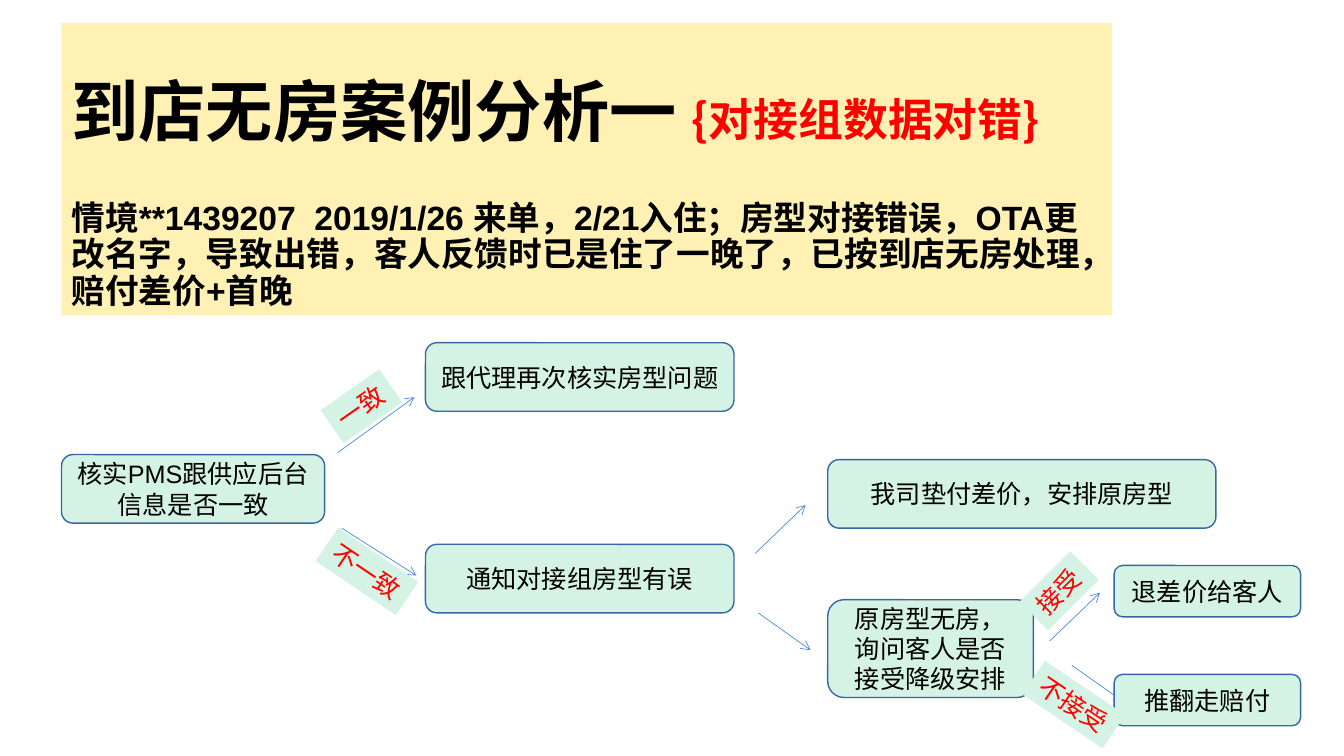
"""Build the slide on a hotel booking case and its decision tree."""
from lxml.etree import SubElement
from pptx import Presentation
from pptx.dml.color import RGBColor
from pptx.enum.shapes import MSO_CONNECTOR, MSO_SHAPE
from pptx.enum.text import MSO_ANCHOR, MSO_AUTO_SIZE, PP_ALIGN
from pptx.oxml.ns import qn
from pptx.util import Emu, Pt

HUES = {"sand": "FFF1B3", "mint": "D4F3E4", "edge": "3768A3",
        "arrow": "4B8CDC", "black": "000000", "red": "FF0000"}
SANS, HAN = "Arial", "Noto Sans CJK SC"

HEAD = (61, 23, 1042, 290)
TITLE = "到店无房案例分析一 "
TOPIC = "{对接组数据对错}"
CASE = ("情境**1439207  2019/1/26\u00a0来单，2/21入住；房型对接错误，OTA更改名字，"
        "导致出错，客人反馈时已是住了一晚了，已按到店无房处理，赔付差价+首晚")

STEPS = [
    ("核实PMS跟供应后台信息是否一致", 61, 451, 261, 68),
    ("跟代理再次核实房型问题", 422, 340, 306, 68),
    ("通知对接组房型有误", 422, 540, 306, 68),
    ("我司垫付差价，安排原房型", 821, 456, 385, 68),
    ("原房型无房，询问客人是否接受降级安排", 821, 595, 204, 97),
    ("退差价给客人", 1105, 561, 185, 51),
    ("推翻走赔付", 1105, 669, 185, 51),
]
ARROWS = [
    (339, 524, 413, 571), (335, 449, 411, 394), (749, 549, 799, 501),
    (752, 608, 804, 645), (1041, 636, 1091, 588), (1063, 660, 1114, 696),
]
TAGS = [
    ("一致", 323, 383, 71, 325), ("不一致", 316, 547, 96, 34),
    ("接受", 1015, 566, 71, 315), ("不接受", 1017, 679, 96, 34),
]
TAG_H = 40


def px(num):
    return Emu(num * 9144)


def hue(name):
    return RGBColor.from_string(HUES[name])


def write(para, text, size=18, color="black", bold=False, font=SANS,
          align=PP_ALIGN.LEFT):
    para.alignment = align
    run = para.add_run()
    run.text = text
    run.font.size = Pt(size)
    run.font.bold = bold
    run.font.name = font
    run.font.color.rgb = hue(color)
    SubElement(run.font._element, qn("a:ea"), typeface=HAN)


def add_box(slide, kind, area, fill):
    box = slide.shapes.add_shape(kind, *map(px, area))
    box.shadow.inherit = False
    box.fill.solid()
    box.fill.fore_color.rgb = hue(fill)
    return box


def add_head(slide):
    head = slide.shapes.title
    head.left, head.top, head.width, head.height = map(px, HEAD)
    head.fill.solid()
    head.fill.fore_color.rgb = hue("sand")
    frame = head.text_frame
    frame.word_wrap = True
    frame.auto_size = MSO_AUTO_SIZE.NONE
    frame.vertical_anchor = MSO_ANCHOR.BOTTOM
    first, case = frame.paragraphs[0], frame.add_paragraph()
    write(first, TITLE, size=48, bold=True)
    write(first, TOPIC, size=32, color="red", bold=True, font=HAN)
    write(case, CASE, size=24, bold=True)
    first.line_spacing = case.line_spacing = 0.9
    case.space_before = Pt(36)


def add_arrow(slide, ends):
    line = slide.shapes.add_connector(MSO_CONNECTOR.STRAIGHT, *map(px, ends))
    line.line.color.rgb = hue("arrow")
    line.line.width = Pt(0.5)
    SubElement(line.line._get_or_add_ln(), qn("a:tailEnd"), type="arrow")
    SubElement(line._element.spPr, qn("a:effectLst"))


def add_step(slide, text, *area):
    box = add_box(slide, MSO_SHAPE.FLOWCHART_ALTERNATE_PROCESS, area, "mint")
    box.line.color.rgb = hue("edge")
    box.line.width = Pt(1)
    frame = box.text_frame
    frame.word_wrap = True
    frame.vertical_anchor = MSO_ANCHOR.MIDDLE
    write(frame.paragraphs[0], text, align=PP_ALIGN.CENTER)


def add_tag(slide, text, left, top, width, turn):
    box = add_box(slide, MSO_SHAPE.RECTANGLE, (left, top, width, TAG_H), "mint")
    box.line.fill.background()
    box.rotation = turn
    frame = box.text_frame
    frame.word_wrap = False
    frame.vertical_anchor = MSO_ANCHOR.TOP
    write(frame.paragraphs[0], text, color="red")


def main():
    deck = Presentation()
    deck.slide_width, deck.slide_height = px(1333), px(750)
    slide = deck.slides.add_slide(deck.slide_layouts[5])
    add_head(slide)
    for ends in ARROWS:
        add_arrow(slide, ends)
    for step in STEPS:
        add_step(slide, *step)
    for tag in TAGS:
        add_tag(slide, *tag)
    deck.save("out.pptx")


if __name__ == "__main__":
    main()
